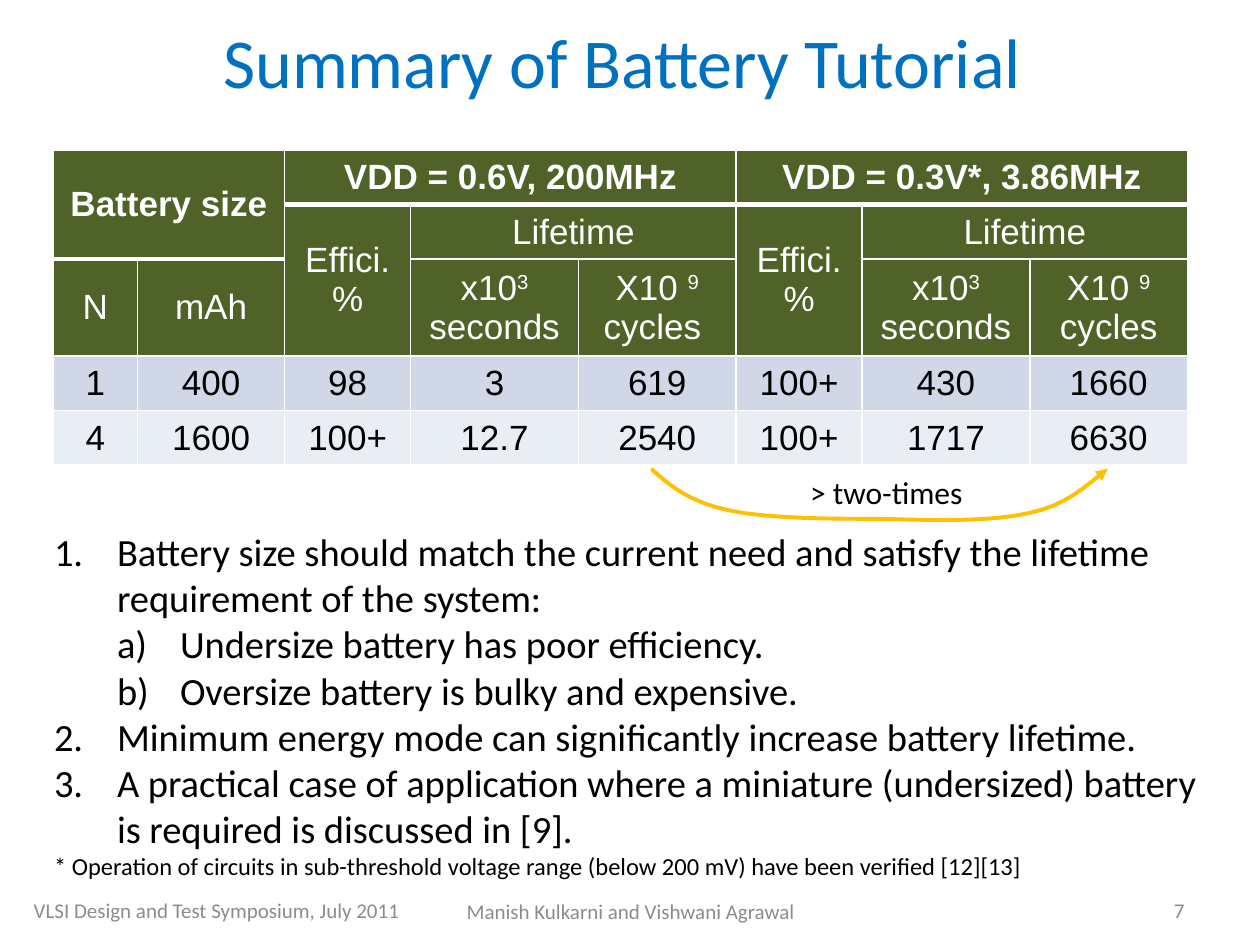
from lxml import etree
from pptx import Presentation
from pptx.dml.color import RGBColor
from pptx.enum.text import MSO_ANCHOR, PP_ALIGN
from pptx.oxml.ns import qn
from pptx.util import Cm, Pt

LEFT, CENTER, RIGHT = PP_ALIGN.LEFT, PP_ALIGN.CENTER, PP_ALIGN.RIGHT
TOP, MIDDLE = MSO_ANCHOR.TOP, MSO_ANCHOR.MIDDLE

COLORS = {
    "title": "0070C0", "text": "000000", "footer": "8C8C8C", "white": "FFFFFF",
    "header": "4F6228", "band_dark": "D0D8E8", "band_light": "E9EDF4", "arrow": "FFC000",
}
COLUMN_WIDTHS = [1.7, 2.97, 2.54, 3.38, 3.18, 2.54, 3.38, 3.18]
ROW_HEIGHTS = [1.04, 1.04, 1.83, 1.04, 1.04]
HEADER_ROWS = 3
MERGES = [
    (0, 0, 1, 1), (0, 2, 0, 4), (0, 5, 0, 7), (1, 2, 2, 2),
    (1, 3, 1, 4), (1, 5, 2, 5), (1, 6, 1, 7),
]
BATTERY_ROWS = [
    ["Battery size", "", "VDD = 0.6V, 200MHz", "", "", "VDD = 0.3V*, 3.86MHz", "", ""],
    ["", "", "Effici.\n%", "Lifetime", "", "Effici. %", "Lifetime", ""],
    ["N", "mAh", "", "x10^3^ seconds", "X10 ^9^ cycles ", "", "x10^3^ seconds", "X10 ^9^ cycles"],
    ["1", "400", "98", "3", "619", "100+", "430", "1660"],
    ["4", "1600", "100+", "12.7", "2540", "100+", "1717", "6630"],
]
CONCLUSIONS = [
    (0, "Battery size should match the current need and satisfy the lifetime "
        "requirement of the system:"),
    (1, "Undersize battery has poor efficiency."),
    (1, "Oversize battery is bulky and expensive."),
    (0, "Minimum energy mode can significantly increase battery lifetime."),
    (0, "A practical case of application where a miniature (undersized) battery "
        "is required is discussed in [9]."),
]
FOOTNOTE = ("* Operation of circuits in sub-threshold voltage range (below 200 mV) "
            "have been verified [12][13]")
NUMBERING = ["arabicPeriod", "alphaLcParenR"]
CURVE_START = (13.13, 9.45)
CURVE_PIECES = [
    [(13.51, 9.8), (13.92, 10.13), (14.71, 10.29)],
    [(15.49, 10.46), (16.84, 10.46), (17.83, 10.46)],
    [(18.85, 10.49), (19.99, 10.52), (20.75, 10.34)],
    [(21.49, 10.19), (21.89, 9.8), (22.33, 9.45)],
]
CURVE_STEPS = 8


def color(name):
    """Return the named colour."""
    return RGBColor.from_string(COLORS[name])


def set_font(para, size, color_name, family="Calibri", bold=False):
    """Set the font of a whole paragraph."""
    font = para.font
    font.size, font.name, font.bold = Pt(size), family, bold
    font.color.rgb = color(color_name)


def add_box(slide, place, anchor=TOP, wrap=True):
    """Add an empty text box and return its text frame."""
    frame = slide.shapes.add_textbox(*map(Cm, place)).text_frame
    frame.word_wrap = wrap
    frame.vertical_anchor = anchor
    return frame


def add_label(slide, place, text, size, color_name, align=LEFT, anchor=MIDDLE, wrap=True):
    """Add a text box with one line of text."""
    para = add_box(slide, place, anchor, wrap).paragraphs[0]
    para.text = text
    para.alignment = align
    set_font(para, size, color_name)


def set_borders(cell, widths):
    """Draw white cell borders, with widths in points by edge letter."""
    properties = cell._tc.get_or_add_tcPr()
    for edge, width in widths.items():
        line = etree.SubElement(properties, qn(f"a:ln{edge}"), w=str(Pt(width)))
        fill = etree.SubElement(line, qn("a:solidFill"))
        etree.SubElement(fill, qn("a:srgbClr"), val=COLORS["white"])


def write_cell(cell, text, color_name, bold):
    """Write centred text, raising the parts between carets."""
    cell.vertical_anchor = MIDDLE
    frame = cell.text_frame
    for index, line in enumerate(text.split("\n")):
        para = frame.add_paragraph() if index else frame.paragraphs[0]
        para.alignment = CENTER
        set_font(para, 20, color_name, "Arial", bold)
        for part_index, part in enumerate(line.split("^")):
            span = para.add_run()
            span.text = part
            if part_index % 2:
                span._r.get_or_add_rPr().set("baseline", "30000")


def add_battery_table(slide):
    """Add the table of efficiency and lifetime by battery size."""
    frame = slide.shapes.add_table(
        len(ROW_HEIGHTS), len(COLUMN_WIDTHS), Cm(1.07), Cm(3.02),
        Cm(sum(COLUMN_WIDTHS)), Cm(sum(ROW_HEIGHTS)))
    table = frame.table
    table.first_row = table.horz_banding = False
    for column, width in zip(table.columns, COLUMN_WIDTHS):
        column.width = Cm(width)
    for row, height in zip(table.rows, ROW_HEIGHTS):
        row.height = Cm(height)
    for top, left, bottom, right in MERGES:
        table.cell(top, left).merge(table.cell(bottom, right))
    fills = ["header"] * HEADER_ROWS + ["band_dark", "band_light"]
    for r, texts in enumerate(BATTERY_ROWS):
        for c, text in enumerate(texts):
            cell = table.cell(r, c)
            heading_row = 1 if c < 2 else 0
            set_borders(cell, {
                "L": 1, "R": 1,
                "T": 3 if r == heading_row + 1 else 1,
                "B": 3 if r in (0, heading_row) else 1})
            cell.fill.solid()
            cell.fill.fore_color.rgb = color(fills[r])
            if text:
                write_cell(cell, text, "white" if r < HEADER_ROWS else "text", r == 0)


def bezier_point(corners, t):
    """Return the point at t on a cubic curve, in whole length units."""
    weights = [(1 - t) ** 3, 3 * t * (1 - t) ** 2, 3 * t ** 2 * (1 - t), t ** 3]
    return tuple(Cm(sum(w * v for w, v in zip(weights, axis))) for axis in zip(*corners))


def add_curved_arrow(slide):
    """Add the curved arrow that compares the two cycle counts."""
    points = []
    start = CURVE_START
    for piece in CURVE_PIECES:
        points += [bezier_point([start, *piece], step / CURVE_STEPS)
                   for step in range(1, CURVE_STEPS + 1)]
        start = piece[-1]
    builder = slide.shapes.build_freeform(*map(Cm, CURVE_START))
    builder.add_line_segments(points, close=False)
    arrow = builder.convert_to_shape()
    arrow.shadow.inherit = False
    arrow.fill.background()
    arrow.line.color.rgb = color("arrow")
    arrow.line.width = Pt(2.25)
    etree.SubElement(arrow.line._get_or_add_ln(), qn("a:tailEnd"), type="triangle")


def add_conclusions(slide):
    """Add the numbered conclusions and the footnote."""
    frame = add_box(slide, (0.84, 10.52, 23.75, 7.44))
    for index, (level, text) in enumerate(CONCLUSIONS):
        para = frame.add_paragraph() if index else frame.paragraphs[0]
        para.text = text
        para.level = level
        set_font(para, 22, "text")
        properties = para._p.get_or_add_pPr()
        properties.set("marL", str(Cm(1.27 * (level + 1))))
        properties.set("indent", str(Cm(-1.27)))
        bullet = etree.Element(qn("a:buAutoNum"), type=NUMBERING[level])
        properties.insert(0, bullet)
    note = frame.add_paragraph()
    note.text = FOOTNOTE
    set_font(note, 14, "text")


def main():
    """Build the slide and save the deck."""
    deck = Presentation()
    deck.slide_width, deck.slide_height = Cm(25.4), Cm(19.05)
    slide = deck.slides.add_slide(deck.slide_layouts[6])
    add_label(slide, (1.27, 0, 22.86, 2.46), "Summary of Battery Tutorial ", 40, "title", CENTER)
    add_battery_table(slide)
    add_label(slide, (0.43, 17.83, 8.15, 1.02),
              "VLSI Design and Test Symposium, July 2011", 12, "footer")
    add_label(slide, (18.21, 17.83, 5.92, 1.02), "7", 12, "footer", RIGHT)
    add_label(slide, (16.08, 9.42, 3.81, 1.02), "> two-times", 18, "text", anchor=TOP, wrap=False)
    add_curved_arrow(slide)
    add_conclusions(slide)
    add_label(slide, (8.69, 17.86, 8.05, 1.02),
              "Manish Kulkarni and Vishwani Agrawal", 12, "footer", CENTER)
    deck.save("out.pptx")


if __name__ == "__main__":
    main()
